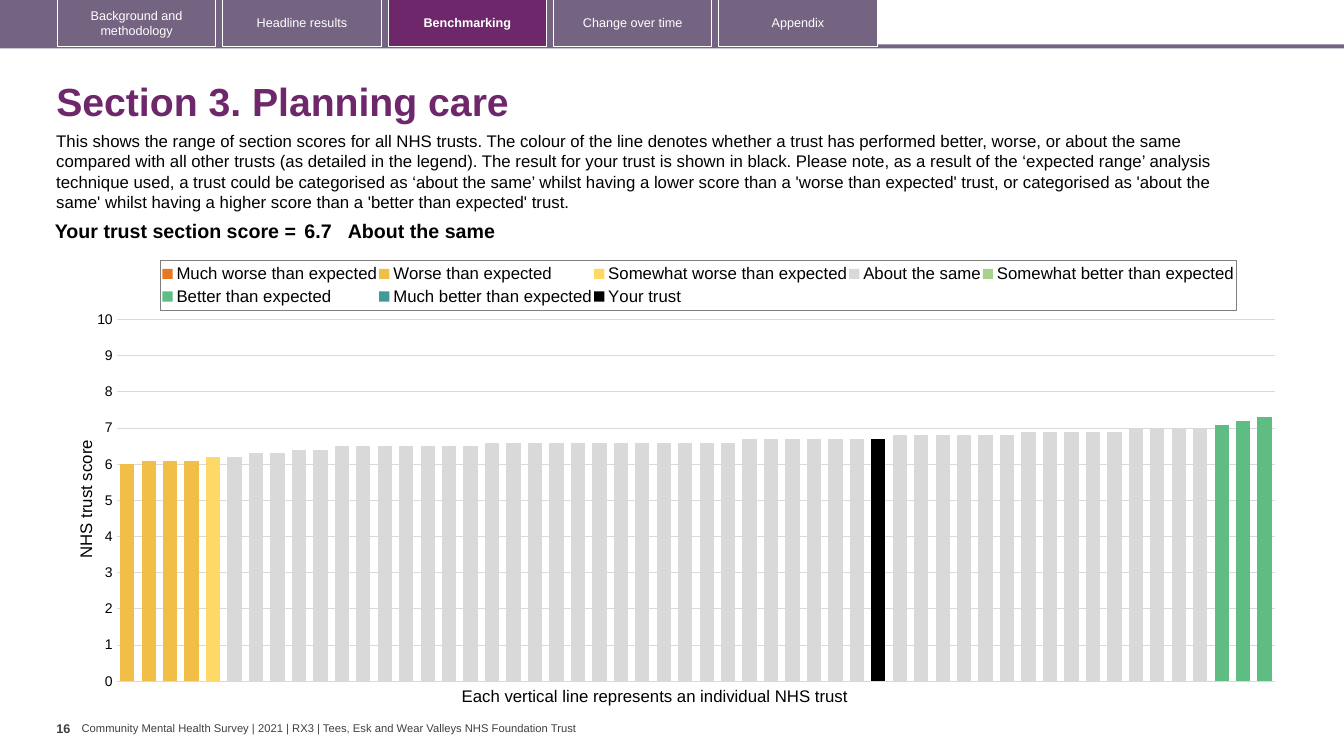
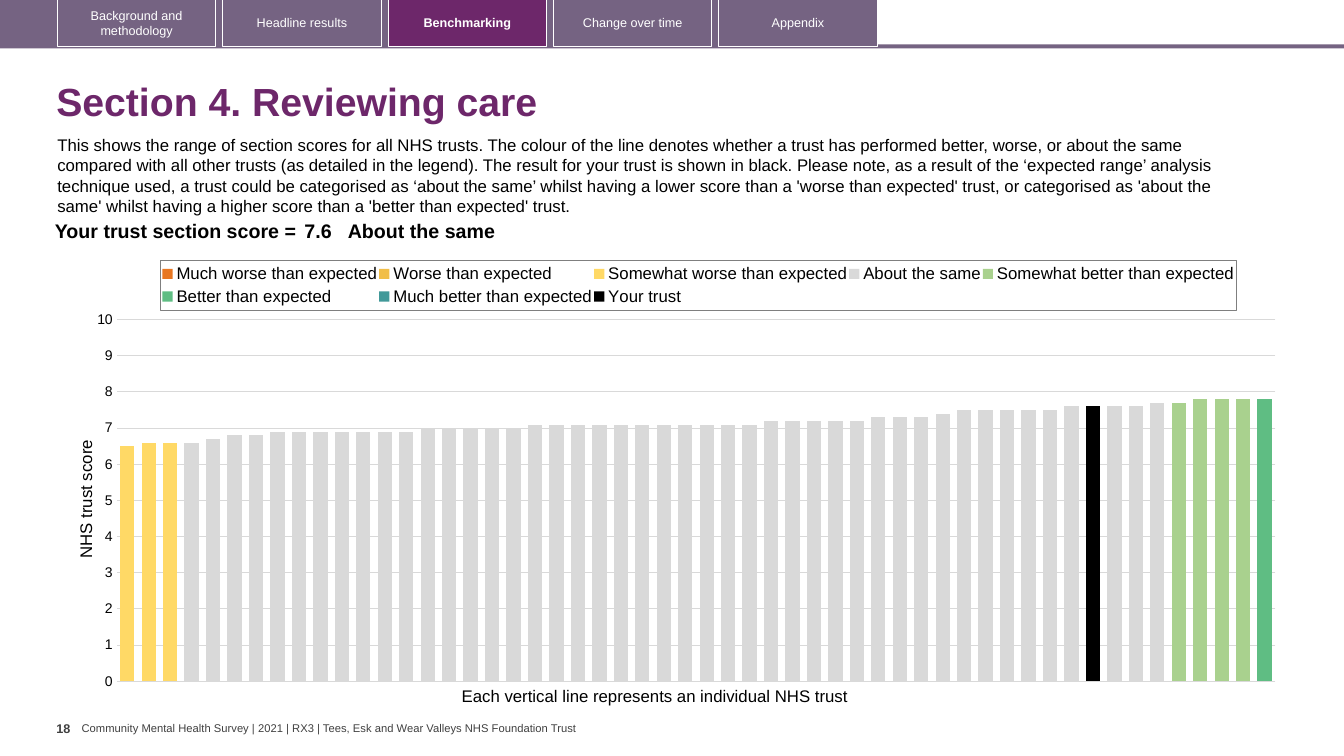
from copy import deepcopy
from dataclasses import dataclass

from pptx import Presentation
from pptx.chart.data import CategoryChartData
from pptx.dml.color import RGBColor
from pptx.enum.chart import XL_CHART_TYPE as ChartType, XL_LEGEND_POSITION as LegendPosition, XL_TICK_MARK as TickMark
from pptx.enum.shapes import MSO_SHAPE as Preset
from pptx.enum.text import MSO_ANCHOR as Anchor, PP_ALIGN as Align
from pptx.oxml import parse_xml
from pptx.oxml.ns import nsdecls, qn
from pptx.util import Emu, Pt

PX = 9144  # EMU in one px, 100 px to the inch


@dataclass(frozen=True)
class Theme:
    font: str = "Arial"
    purple: str = "6D276A"
    mauve: str = "756382"
    white: str = "FFFFFF"
    black: str = "000000"
    footer_grey: str = "404040"
    grid_grey: str = "D9D9D9"
    legend_line: str = "7F7F7F"
    title_size: int = 28
    score_size: int = 14
    body_size: int = 12
    axis_size: int = 10
    tab_size: int = 9
    footer_size: int = 8
    thin_line: float = 0.75


THEME = Theme()

TABS = ["Background and methodology", "Headline results", "Benchmarking", "Change over time", "Appendix"]
ACTIVE_TAB = "Benchmarking"
FOOTER = "Community Mental Health Survey | 2021 | RX3 | Tees, Esk and Wear Valleys NHS Foundation Trust"
INTRO = (
    "This shows the range of section scores for all NHS trusts. The colour of the line denotes whether a trust "
    "has performed better, worse, or about the same compared with all other trusts (as detailed in the legend). "
    "The result for your trust is shown in black. Please note, as a result of the ‘expected range’ analysis "
    "technique used, a trust could be categorised as ‘about the same’ whilst having a lower score than a "
    "'worse than expected' trust, or categorised as 'about the same' whilst having a higher score than a "
    "'better than expected' trust."
)
SCORE_LABEL = "Your trust section score ="
VALUE_TITLE = "NHS trust score"
CATEGORY_TITLE = "Each vertical line represents an individual NHS trust"

TRUST_COUNT = 54
YOUR_TRUST = "Your trust"
SERIES_COLORS = {
    "Much worse than expected": "E87722",
    "Worse than expected": "F1BE48",
    "Somewhat worse than expected": "FFD966",
    "About the same": "D9D9D9",
    "Somewhat better than expected": "A9D18E",
    "Better than expected": "5FBD83",
    "Much better than expected": "419999",
    YOUR_TRUST: "000000",
}

# Scores run from the lowest trust to the highest, as (score, number of trusts) in each band.
SECTIONS = [
    {
        "page": "16", "title": "Section 3. Planning care", "intro_at": (46, 125),
        "score": 6.7, "verdict": "About the same", "position": 36,
        "bands": {
            "Worse than expected": [(6, 1), (6.1, 3)],
            "Somewhat worse than expected": [(6.2, 1)],
            "About the same": [(6.2, 1), (6.3, 2), (6.4, 2), (6.5, 7), (6.6, 12),
                               (6.7, 7), (6.8, 6), (6.9, 5), (7, 4)],
            "Better than expected": [(7.1, 1), (7.2, 1), (7.3, 1)],
        },
    },
    {
        "page": "18", "title": "Section 4. Reviewing care", "intro_at": (47, 129),
        "score": 7.6, "verdict": "About the same", "position": 46,
        "bands": {
            "Somewhat worse than expected": [(6.5, 1), (6.6, 2)],
            "About the same": [(6.6, 1), (6.7, 1), (6.8, 2), (6.9, 7), (7, 5), (7.1, 11),
                               (7.2, 5), (7.3, 3), (7.4, 1), (7.5, 5), (7.6, 4), (7.7, 1)],
            "Somewhat better than expected": [(7.7, 1), (7.8, 3)],
            "Better than expected": [(7.8, 1)],
        },
    },
]


def px(*lengths):
    return [Emu(length * PX) for length in lengths]


def rgb(color):
    return RGBColor.from_string(color)


def style_font(font, size, color=THEME.black, bold=False):
    font.name = THEME.font
    font.size = Pt(size)
    font.bold = bold
    font.color.rgb = rgb(color)


def set_margins(target, left, top, right, bottom):
    target.margin_left, target.margin_top, target.margin_right, target.margin_bottom = px(left, top, right, bottom)


def add_text(slide, text, box, size, color=THEME.black, bold=False,
             margins=(10, 5, 10, 5), anchor=Anchor.TOP, line_spacing=None):
    frame = slide.shapes.add_textbox(*px(*box)).text_frame
    frame.word_wrap = True
    frame.vertical_anchor = anchor
    set_margins(frame, *margins)
    paragraph = frame.paragraphs[0]
    paragraph.text = text
    paragraph.line_spacing = line_spacing
    style_font(paragraph.font, size, color, bold)


def add_box(slide, box, fill=None, line=None):
    shape = slide.shapes.add_shape(Preset.RECTANGLE, *px(*box))
    shape.shadow.inherit = False
    if fill:
        shape.fill.solid()
        shape.fill.fore_color.rgb = rgb(fill)
    else:
        shape.fill.background()
    if line:
        shape.line.color.rgb = rgb(line)
        shape.line.width = Pt(THEME.thin_line)
    else:
        shape.line.fill.background()
    return shape


def add_navigation(slide):
    add_box(slide, (0, 44, 1333, 4), THEME.mauve)
    add_box(slide, (0, 0, 870, 47), THEME.mauve)
    for index, label in enumerate(TABS):
        active = label == ACTIVE_TAB
        tab = add_box(slide, (57 + 164 * index, -1, 157, 47), THEME.purple if active else None, THEME.white)
        frame = tab.text_frame
        frame.word_wrap = True
        frame.vertical_anchor = Anchor.MIDDLE
        paragraph = frame.paragraphs[0]
        paragraph.text = label
        paragraph.alignment = Align.CENTER
        style_font(paragraph.font, THEME.tab_size, THEME.white, active)


def add_footer(slide, page):
    add_text(slide, FOOTER, (81, 716, 510, 13), THEME.footer_size, THEME.footer_grey,
             margins=(0, 0, 0, 0), anchor=Anchor.MIDDLE)
    add_text(slide, page, (56, 710, 25, 40), THEME.tab_size, THEME.footer_grey, True, margins=(0, 5, 0, 5))


def add_score_table(slide, score, verdict):
    table = slide.shapes.add_table(1, 3, *px(35, 215, 1169, 31)).table
    table.first_row = table.horz_banding = False
    columns = [(263, SCORE_LABEL, Align.RIGHT, 4), (47, str(score), Align.LEFT, 4), (859, verdict, Align.LEFT, 0)]
    for index, (width, text, alignment, side) in enumerate(columns):
        table.columns[index].width = Emu(width * PX)
        cell = table.cell(0, index)
        cell.fill.background()
        set_margins(cell, side, 4, side, 4)
        paragraph = cell.text_frame.paragraphs[0]
        paragraph.text = text
        paragraph.alignment = alignment
        style_font(paragraph.font, THEME.score_size, bold=True)


def series_values(section):
    """Spread the bands over the trusts, one list of scores for each series."""
    values = {name: [None] * TRUST_COUNT for name in SERIES_COLORS}
    trust = 0
    for name, runs in section["bands"].items():
        for score, count in runs:
            values[name][trust:trust + count] = [score] * count
            trust += count
    values[YOUR_TRUST][section["position"] - 1] = section["score"]
    return values


def manual_layout(x, y, width=None, height=None, inner=False):
    parts = ['<c:layoutTarget val="inner"/>'] if inner else []
    parts += ['<c:xMode val="edge"/>', '<c:yMode val="edge"/>']
    sizes = {"x": x, "y": y, "w": width, "h": height}
    parts += [f'<c:{tag} val="{size}"/>' for tag, size in sizes.items() if size is not None]
    return parse_xml(f'<c:layout {nsdecls("c")}><c:manualLayout>{"".join(parts)}</c:manualLayout></c:layout>')


def move_last_series_to_second_axis(plot_area):
    first = plot_area.find(qn("c:barChart"))
    second = deepcopy(first)
    first.remove(first.findall(qn("c:ser"))[-1])
    for series in second.findall(qn("c:ser"))[:-1]:
        second.remove(series)
    first.addnext(second)
    axes = [deepcopy(plot_area.find(qn(tag))) for tag in ("c:catAx", "c:valAx")]
    ids = {axis.find(qn("c:axId")).get("val"): str(5001 + index) for index, axis in enumerate(axes)}
    for root in (second, *axes):
        for reference in root.iter(qn("c:axId"), qn("c:crossAx")):
            reference.set("val", ids[reference.get("val")])
    for axis in reversed(axes):
        axis.find(qn("c:delete")).set("val", "1")
        plot_area.findall(qn("c:valAx"))[0].addnext(axis)
    axes[1].find(qn("c:axPos")).set("val", "r")
    axes[1].find(qn("c:crosses")).set("val", "max")


def add_score_chart(slide, section):
    data = CategoryChartData()
    data.categories = [str(number + 1) for number in range(TRUST_COUNT)]
    for name, values in series_values(section).items():
        data.add_series(name, values)
    chart = slide.shapes.add_chart(ChartType.COLUMN_CLUSTERED, *px(67, 247, 1215, 444), data).chart
    chart.has_title = False
    style_font(chart.font, THEME.axis_size)

    plot = chart.plots[0]
    plot.gap_width, plot.overlap, plot.vary_by_categories = 50, 100, False
    for series in plot.series:
        series.format.fill.solid()
        series.format.fill.fore_color.rgb = rgb(SERIES_COLORS[series.name])

    chart.category_axis.visible = False
    axis = chart.value_axis
    axis.minimum_scale, axis.maximum_scale, axis.major_unit = 0, 10, 1
    axis.major_tick_mark = TickMark.NONE
    axis.tick_labels.number_format = "0"
    axis.tick_labels.number_format_is_linked = False
    axis.format.line.fill.background()
    style_font(axis.tick_labels.font, THEME.axis_size)
    axis.has_major_gridlines = False
    plot_area = chart.element.find(f".//{qn('c:plotArea')}")
    move_last_series_to_second_axis(plot_area)

    gridlines = axis.major_gridlines.format.line
    axis.has_major_gridlines = True
    gridlines.color.rgb = rgb(THEME.grid_grey)
    gridlines.width = Pt(THEME.thin_line)
    title = axis.axis_title
    paragraph = title.text_frame.paragraphs[0]
    paragraph.text = VALUE_TITLE
    style_font(paragraph.font, THEME.body_size)

    chart.has_legend = True
    legend = chart.legend
    legend.position = LegendPosition.TOP
    legend.include_in_layout = False
    style_font(legend.font, THEME.body_size)
    legend_border = parse_xml(
        f'<c:spPr {nsdecls("c", "a")}><a:ln w="{Pt(THEME.thin_line)}"><a:solidFill>'
        f'<a:srgbClr val="{THEME.legend_line}"/></a:solidFill></a:ln></c:spPr>')
    legend_root = chart.element.find(f".//{qn('c:legend')}")
    legend_root.find(qn("c:txPr")).addprevious(legend_border)

    title_root = plot_area.find(f".//{qn('c:title')}")
    for root in (plot_area, title_root, legend_root):
        for layout in root.findall(qn("c:layout")):
            root.remove(layout)
    plot_area.insert(0, manual_layout(0.04, 0.158, 0.946, 0.808, inner=True))
    title_root.find(qn("c:tx")).addnext(manual_layout(0.004, 0.42))
    legend_root.find(qn("c:legendPos")).addnext(manual_layout(0.076, 0.025, 0.878, 0.112))


def add_section_slide(presentation, section):
    slide = presentation.slides.add_slide(presentation.slide_layouts[6])
    add_navigation(slide)
    add_text(slide, section["title"], (46, 67, 1249, 72), THEME.title_size, THEME.purple, True,
             anchor=Anchor.MIDDLE, line_spacing=0.9)
    add_footer(slide, section["page"])
    add_text(slide, INTRO, (*section["intro_at"], 1213, 91), THEME.body_size)
    add_text(slide, CATEGORY_TITLE, (448, 675, 411, 30), THEME.body_size)
    add_score_chart(slide, section)
    add_score_table(slide, section["score"], section["verdict"])


def main():
    presentation = Presentation()
    presentation.slide_width, presentation.slide_height = px(1333, 750)
    for section in SECTIONS:
        add_section_slide(presentation, section)
    presentation.save("out.pptx")


if __name__ == "__main__":
    main()
